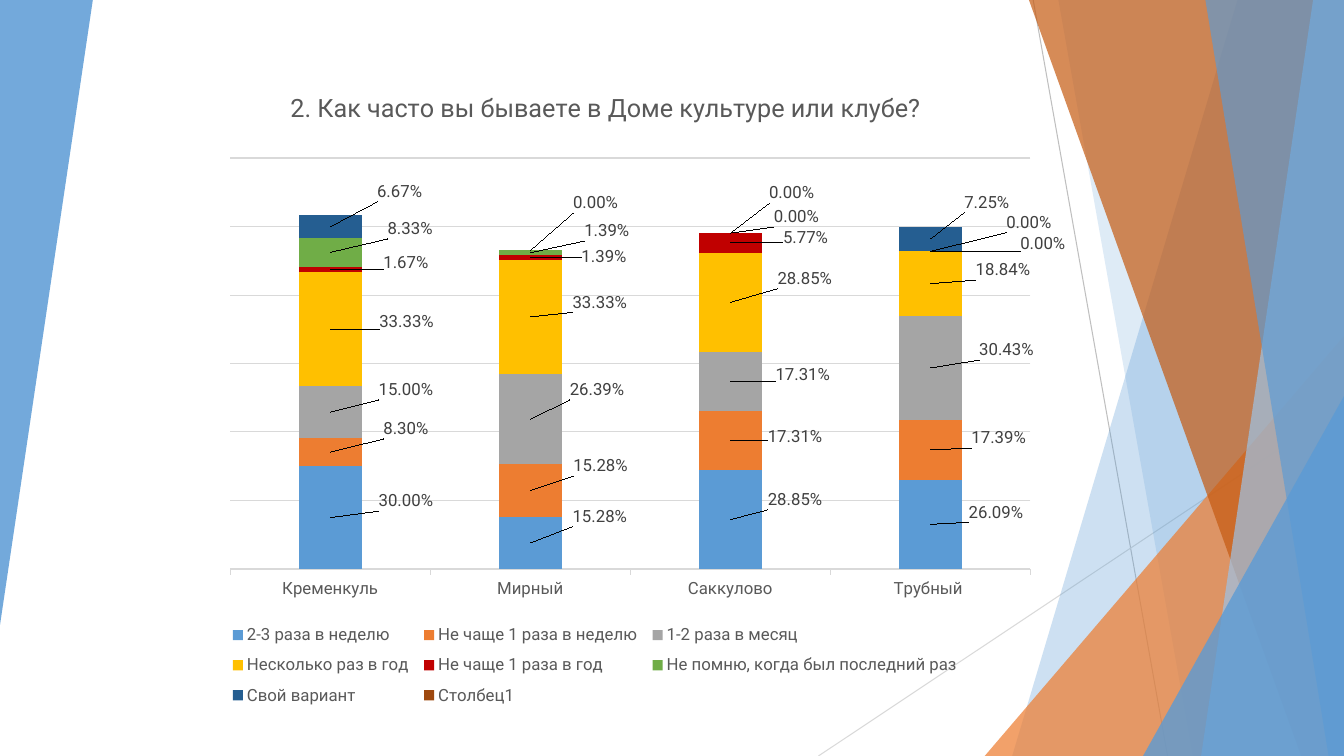
from lxml import etree
from pptx import Presentation
from pptx import oxml
from pptx.chart import data
from pptx.dml.color import RGBColor
from pptx.enum import chart as ch, shapes
from pptx.oxml import ns
from pptx.util import Pt

BLUE, GREY, TEXT = "5B9BD5", "D9D9D9", "595959"
BOX = (121, 43.2, 640, 477.4)
PLOT = (0.068, 0.146, 0.893, 0.615)
PEAK = 1.2
TOWNS = ["Кременкуль", "Мирный", "Саккулово", "Трубный "]

# name, colour, values, label centres in points on the slide
SERIES = [
    ("2-3 раза в неделю", BLUE, (0.3, 0.1528, 0.2885, 0.2609),
     ((290, 358), (428.5, 369), (568, 357), (711.5, 366))),
    ("Не чаще 1 раза в неделю", "ED7D31", (0.083, 0.1528, 0.1731, 0.1739),
     ((290, 306.5), (429, 333), (568, 312), (713.5, 313))),
    ("1-2 раза в месяц", "A5A5A5", (0.15, 0.2639, 0.1731, 0.3043),
     ((290, 278.5), (426.5, 278.5), (573.5, 268), (719, 250))),
    ("Несколько раз в год", "FFC000", (0.3333, 0.3333, 0.2885, 0.1884),
     ((290.5, 230), (428.5, 216), (575, 199), (716.5, 193))),
    ("Не чаще 1 раза в год", "C00000", (0.0167, 0.0139, 0.0577, 0),
     ((290, 188), (431.5, 183), (575.5, 170), (745, 174))),
    ("Не помню, когда был последний раз", "70AD47", (0.0833, 0.0139, 0, 0),
     ((293, 163.5), (433.5, 165), (569, 155), (735, 159))),
    ("Свой вариант", "255E91", (0.0667, 0, 0, 0.0725),
     ((285.5, 137), (425.5, 145), (565.5, 138), (705, 144.5))),
    ("Столбец1", "9E480E", (None,) * 4, ()),
]


def rgb(code):
    return RGBColor.from_string(code)


def put(item, **form):
    for key, val in form.items():
        setattr(item, key, val)


def place(prev, **parts):
    """Add a manual chart layout right after the element prev."""
    tags = "".join(f'<c:{k} val="{v}"/>' for k, v in parts.items())
    prev.addnext(oxml.parse_xml(
        f'<c:layout {ns.nsdecls("c")}><c:manualLayout>{tags}'
        '</c:manualLayout></c:layout>'))


class Deck:
    def __init__(self):
        self.prs = Presentation()
        put(self.prs, slide_width=Pt(960), slide_height=Pt(540))
        self.slide = self.prs.slides.add_slide(self.prs.slide_layouts[6])
        self.shapes = self.slide.shapes

    def font(self, font, size, code):
        put(font, name="Roboto", size=Pt(size), bold=False)
        font.color.rgb = rgb(code)

    def stroke(self, line, code):
        line.color.rgb = rgb(code)
        line.width = Pt(0.75)

    def line(self, x1, y1, x2, y2, code):
        line = self.shapes.add_connector(
            shapes.MSO_CONNECTOR.STRAIGHT, *map(Pt, (x1, y1, x2, y2)))
        self.stroke(line.line, code)
        etree.SubElement(line._element.spPr, ns.qn("a:effectLst"))

    def paint(self, shape, code, alpha):
        """Fill a shape with a colour at alpha percent, without outline."""
        shape.shadow.inherit = False
        shape.fill.solid()
        shape.fill.fore_color.rgb = rgb(code)
        shape.line.fill.background()
        tint = shape._element.spPr.find(".//" + ns.qn("a:srgbClr"))
        etree.SubElement(tint, ns.qn("a:alpha"), val=str(alpha * 1000))

    def band(self, top, foot, code, alpha):
        """Draw a band from its slanted left edge to the slide's right edge."""
        form = self.shapes.build_freeform(Pt(top), 0)
        form.add_line_segments(
            [(Pt(x), Pt(y)) for x, y in ((960, 0), (960, 540), (foot, 540))])
        self.paint(form.convert_to_shape(), code, alpha)

    def wedge(self, x, y, w, h, code, alpha, turn=0):
        shape = self.shapes.add_shape(
            shapes.MSO_SHAPE.ISOSCELES_TRIANGLE, *map(Pt, (x, y, w, h)))
        shape.adjustments[0] = 1
        shape.rotation = turn
        self.paint(shape, code, alpha)

    def chart(self, title):
        feed = data.CategoryChartData(number_format="0.00%")
        feed.categories = TOWNS
        for name, _, vals, _ in SERIES:
            feed.add_series(name, vals)
        chart = self.shapes.add_chart(
            ch.XL_CHART_TYPE.COLUMN_STACKED, *map(Pt, BOX), feed).chart
        self.font(chart.font, 12, TEXT)
        put(chart.plots[0], gap_width=219, overlap=100, vary_by_categories=False)
        area = chart._chartSpace.chart.plotArea
        for old in area.findall(ns.qn("c:layout")):
            area.remove(old)
        x, y, w, h = PLOT
        mark = etree.Element(ns.qn("c:mark"))
        area.insert(0, mark)
        place(mark, layoutTarget="inner", xMode="edge", yMode="edge",
              x=x, y=y, w=w, h=h)
        area.remove(mark)
        self.title(chart, title)
        self.axes(chart)
        self.legend(chart)
        self.labels(chart)

    def title(self, chart, title):
        frame = chart.chart_title.text_frame
        frame.text = title
        self.font(frame.paragraphs[0].runs[0].font, 18, TEXT)
        node = chart.chart_title._element
        for old in node.findall(ns.qn("c:layout")):
            node.remove(old)
        place(node.find(ns.qn("c:tx")), xMode="edge", yMode="edge", x=0.13, y=0.04)
        chart.chart_title.include_in_layout = False

    def axes(self, chart):
        cat, val = chart.category_axis, chart.value_axis
        put(cat, major_tick_mark=ch.XL_TICK_MARK.OUTSIDE)
        self.font(cat.tick_labels.font, 12, TEXT)
        self.stroke(cat.format.line, GREY)
        put(val, minimum_scale=0, maximum_scale=PEAK, major_unit=0.2,
            has_major_gridlines=True, visible=False)
        self.stroke(val.major_gridlines.format.line, GREY)

    def legend(self, chart):
        chart.has_legend = True
        put(chart.legend, position=ch.XL_LEGEND_POSITION.BOTTOM,
            include_in_layout=False)
        self.font(chart.legend.font, 12, TEXT)
        node = chart.legend._element
        for old in node.findall(ns.qn("c:layout")):
            node.remove(old)
        place(node.find(ns.qn("c:legendPos")), xMode="edge", yMode="edge",
              x=0.06, y=0.83, w=0.83, h=0.15)

    def labels(self, chart):
        """Colour the series and move each label from its segment's centre."""
        left, top, wide, high = BOX
        x, y, w, h = PLOT
        step = w * wide / len(TOWNS)
        base = top + (y + h) * high
        unit = h * high / PEAK
        sums = [0] * len(TOWNS)
        for ser, (_, code, vals, spots) in zip(chart.plots[0].series, SERIES):
            ser.format.fill.solid()
            ser.format.fill.fore_color.rgb = rgb(code)
            put(ser.data_labels, show_value=True, number_format="0.00%",
                number_format_is_linked=False)
            self.font(ser.data_labels.font, 12, "404040")
            for i, (px, py) in enumerate(spots):
                mid_x = left + x * wide + (i + 0.5) * step
                mid_y = base - (sums[i] + vals[i] / 2) * unit
                sums[i] += vals[i]
                label = ser.points[i].data_label
                self.font(label.font, 12, "404040")
                place(label._dLbl.find(ns.qn("c:idx")),
                      x=round((px - mid_x) / wide, 4),
                      y=round((py - mid_y) / high, 4))


def main():
    deck = Deck()
    deck.line(738, 0, 834, 540, "BFBFBF")
    deck.line(960, 290, 584.6, 540, GREY)
    deck.band(884, 723, BLUE, 30)
    deck.band(756, 852, BLUE, 20)
    deck.wedge(703.4, 240, 256.6, 300, "ED7D31", 72)
    deck.band(735, 929.5, "C55A11", 70)
    deck.band(938, 858, "9DC3E6", 70)
    deck.band(861, 949, BLUE, 65)
    deck.wedge(816.5, 283, 143.5, 257, BLUE, 80)
    deck.wedge(0, 0, 66.3, 446.4, BLUE, 85, turn=180)
    deck.chart("2. Как часто вы бываете в Доме культуре или клубе?")
    deck.prs.save("out.pptx")


if __name__ == "__main__":
    main()
